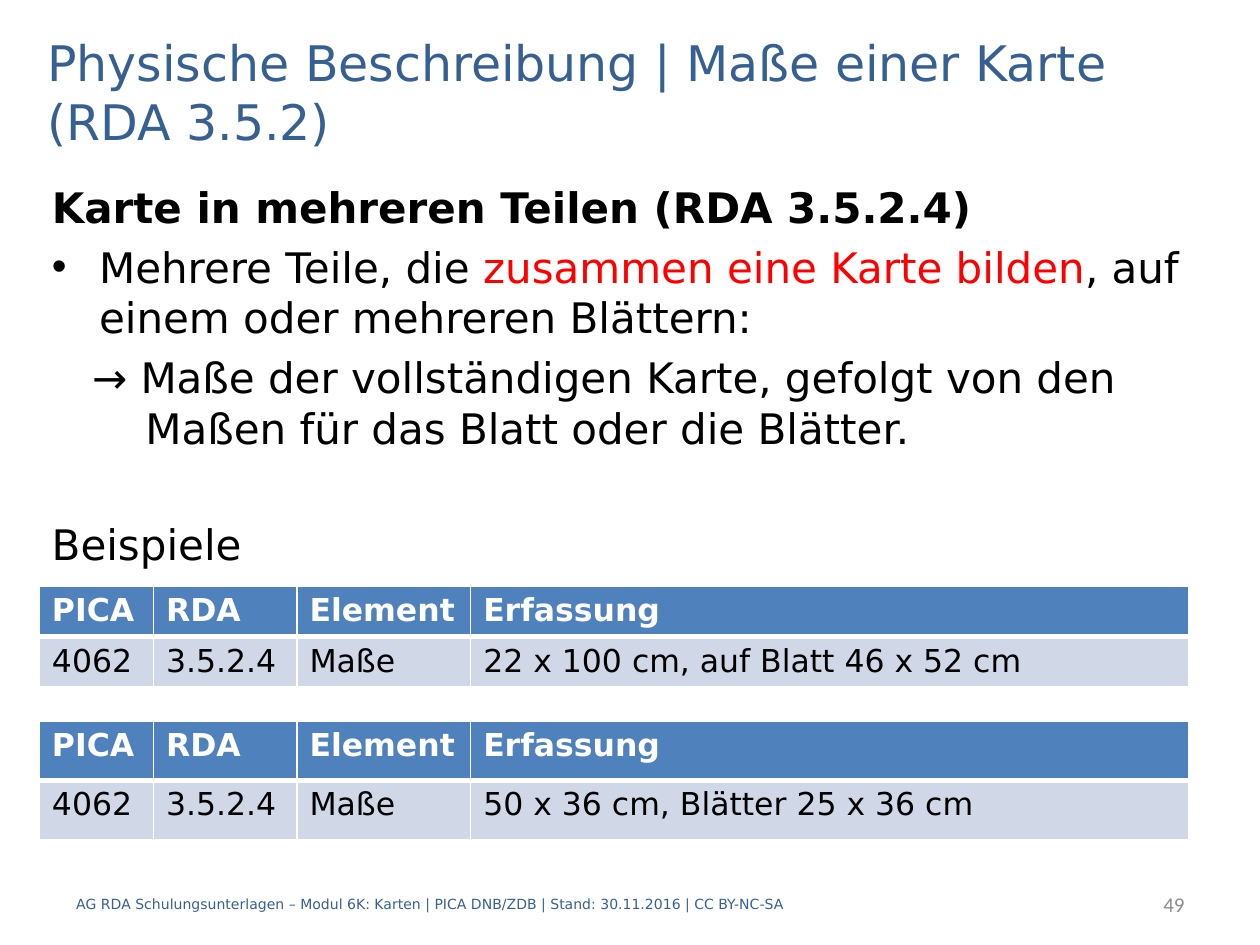
import pptx
import pptx.util
import pptx.dml.color
import pptx.enum.text
import pptx.oxml.ns
import lxml.etree

Pt = pptx.util.Pt
RGBColor = pptx.dml.color.RGBColor
Anchor = pptx.enum.text.MSO_ANCHOR
Align = pptx.enum.text.PP_ALIGN
qn = pptx.oxml.ns.qn

BLACK = RGBColor(0x00, 0x00, 0x00)
WHITE = RGBColor(0xFF, 0xFF, 0xFF)
RED = RGBColor(0xFF, 0x00, 0x00)
NAVY = RGBColor(0x37, 0x60, 0x92)
GREY = RGBColor(0x8C, 0x8C, 0x8C)
HEADER_FILL = RGBColor(0x4F, 0x81, 0xBD)
ROW_FILL = RGBColor(0xD0, 0xD8, 0xE8)

FONT = "DejaVu Sans"
BODY_SIZE = 24
BODY_GAP = 5.5
TABLE_LEFT = 22.5
HEADER = ["PICA", "RDA", "Element", "Erfassung"]


def set_font(p, size, color, bold=False, name=FONT):
    p.font.name = name
    p.font.size = Pt(size)
    p.font.bold = bold
    p.font.color.rgb = color


def add_box(slide, left, top, width, height, anchor=Anchor.TOP):
    sp = slide.shapes.add_textbox(Pt(left), Pt(top), Pt(width), Pt(height))
    tf = sp.text_frame
    tf.word_wrap = True
    tf.vertical_anchor = anchor
    return tf


def add_label(slide, text, box, size, color, name=FONT, align=Align.LEFT):
    p = add_box(slide, *box, anchor=Anchor.MIDDLE).paragraphs[0]
    p.text = text
    p.alignment = align
    set_font(p, size, color, name=name)


def add_body_paragraph(p, runs, bold=False, margin=0, hanging=0, bullet=None):
    p.space_before = Pt(BODY_GAP)
    set_font(p, BODY_SIZE, BLACK, bold)
    for text, color in runs:
        r = p.add_run()
        r.text = text
        if color != BLACK:
            r.font.color.rgb = color
    pPr = p._p.get_or_add_pPr()
    pPr.set("marL", str(Pt(margin)))
    pPr.set("indent", str(-Pt(hanging)))
    if bullet:
        font = lxml.etree.Element(qn("a:buFont"), typeface="Arial")
        char = lxml.etree.Element(qn("a:buChar"), char=bullet)
        pPr.find(qn("a:spcBef")).addnext(font)
        font.addnext(char)


def add_body(slide):
    tf = add_box(slide, 22.5, 100, 680, 193)
    add_body_paragraph(
        tf.paragraphs[0], [("Karte in mehreren Teilen (RDA 3.5.2.4)", BLACK)], bold=True)
    add_body_paragraph(
        tf.add_paragraph(),
        [("Mehrere Teile, die ", BLACK),
         ("zusammen eine Karte bilden", RED),
         (", auf einem oder mehreren Blättern:", BLACK)],
        margin=27, hanging=27, bullet="•")
    add_body_paragraph(
        tf.add_paragraph(),
        [("→ Maße der vollständigen Karte, gefolgt von den "
          "Maßen für das Blatt oder die Blätter.", BLACK)],
        margin=53.5, hanging=30.5)


def set_borders(cell, bottom):
    tcPr = cell._tc.get_or_add_tcPr()
    for side, width in (("L", 1), ("R", 1), ("T", 1), ("B", bottom)):
        ln = lxml.etree.SubElement(tcPr, qn("a:ln" + side), w=str(Pt(width)))
        fill = lxml.etree.SubElement(ln, qn("a:solidFill"))
        lxml.etree.SubElement(fill, qn("a:srgbClr"), val=str(WHITE))


def fill_row(table, row, texts, fill, color, bold, bottom):
    for col, text in enumerate(texts):
        cell = table.cell(row, col)
        set_borders(cell, bottom)
        cell.fill.solid()
        cell.fill.fore_color.rgb = fill
        p = cell.text_frame.paragraphs[0]
        p.text = text
        set_font(p, 18, color, bold)


def add_example(slide, top, row_height, extent):
    widths = [65.25, 82, 99.25, 410.5]
    table = slide.shapes.add_table(
        2, len(widths), Pt(TABLE_LEFT), Pt(top), Pt(sum(widths)), Pt(2 * row_height)).table
    for column, width in zip(table.columns, widths):
        column.width = Pt(width)
    for row in table.rows:
        row.height = Pt(row_height)
    fill_row(table, 0, HEADER, HEADER_FILL, WHITE, True, 3)
    fill_row(table, 1, ["4062", "3.5.2.4", "Maße", extent], ROW_FILL, BLACK, False, 1)


def main():
    prs = pptx.Presentation()
    prs.slide_width, prs.slide_height = Pt(720), Pt(540)
    slide = prs.slides.add_slide(prs.slide_layouts[6])

    add_label(slide, "Physische Beschreibung | Maße einer Karte (RDA 3.5.2)",
              (20, 32, 680, 40), 28, NAVY)
    add_body(slide)
    examples = add_box(slide, 22.5, 292.5, 164, 39.5)
    add_body_paragraph(examples.paragraphs[0], [("Beispiele", BLACK)])
    add_example(slide, 335, 28, "22 x 100 cm, auf Blatt 46 x 52 cm")
    add_example(slide, 412, 34, "50 x 36 cm, Blätter 25 x 36 cm")
    add_label(slide, "AG RDA Schulungsunterlagen – Modul 6K: Karten | PICA DNB/ZDB | "
              "Stand: 30.11.2016 | CC BY-NC-SA", (36.5, 502, 601, 29), 8, NAVY)
    add_label(slide, "49", (569.5, 502, 114.5, 29), 12, GREY, "Calibri", Align.RIGHT)

    prs.save("out.pptx")


if __name__ == "__main__":
    main()
